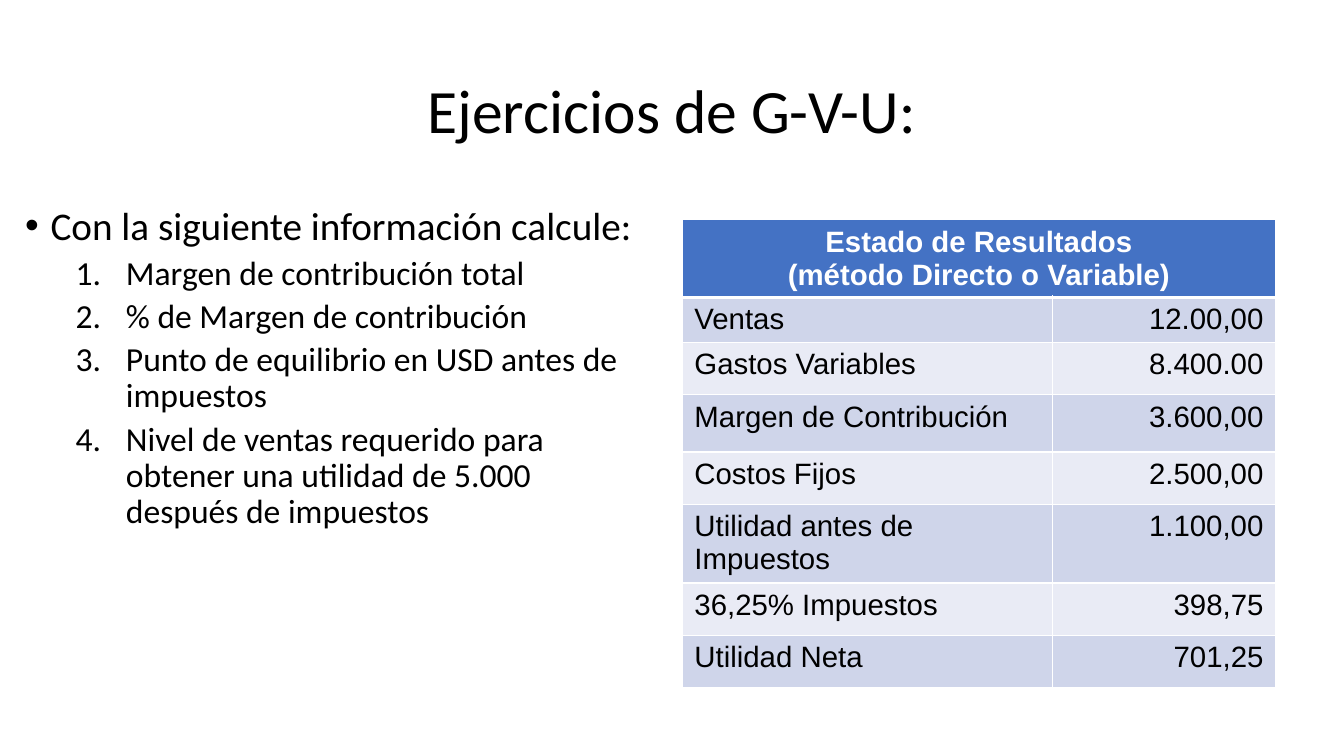
from lxml import etree
from pptx import Presentation
from pptx.dml.color import RGBColor
from pptx.enum.text import MSO_ANCHOR, MSO_AUTO_SIZE, PP_ALIGN
from pptx.oxml.ns import qn
from pptx.util import Cm, Pt

LEFT, MID, RIGHT = PP_ALIGN.LEFT, PP_ALIGN.CENTER, PP_ALIGN.RIGHT
MIDDLE, TOP = MSO_ANCHOR.MIDDLE, MSO_ANCHOR.TOP
FIXED = MSO_AUTO_SIZE.NONE

HUES = {"ink": "000000", "white": "FFFFFF", "head": "4472C4",
        "dark": "CFD5EA", "light": "E9EBF5"}
FONTS = {
    "title": {"name": "Calibri", "size": Pt(44), "bold": False},
    "lead": {"name": "Calibri", "size": Pt(28), "bold": False},
    "item": {"name": "Calibri", "size": Pt(24), "bold": False},
    "head": {"name": "Arial", "size": Pt(21), "bold": True},
    "cell": {"name": "Arial", "size": Pt(21), "bold": False},
}
INSETS = {"margin_left": Cm(0.3), "margin_right": Cm(0.3),
          "margin_top": Cm(0.15), "margin_bottom": Cm(0.15)}

TITLE = "Ejercicios de G-V-U:"
LEAD = "Con la siguiente información calcule:"
TASKS = [
    "Margen de contribución total",
    "% de Margen de contribución",
    "Punto de equilibrio en USD antes de impuestos",
    "Nivel de ventas requerido para obtener una utilidad de 5.000 después de impuestos",
]
HEAD = ["Estado de Resultados", "(método Directo o Variable)"]
ROWS = [
    ("Ventas", "12.00,00", 1.13),
    ("Gastos Variables", "8.400.00", 1.32),
    ("Margen de Contribución", "3.600,00", 1.45),
    ("Costos Fijos", "2.500,00", 1.32),
    ("Utilidad antes de Impuestos", "1.100,00", 1.98),
    ("36,25% Impuestos", "398,75", 1.32),
    ("Utilidad Neta", "701,25", 1.32),
]


def put(obj, vals):
    """Set each named value on an object."""
    for key, val in vals.items():
        setattr(obj, key, val)


def place(shape, box):
    """Move a shape to a box given in centimetres."""
    put(shape, dict(zip(("left", "top", "width", "height"), map(Cm, box))))


def style(para, kind, hue="ink", **form):
    """Format a paragraph and its font."""
    put(para, form)
    put(para.font, FONTS[kind])
    para.font.color.rgb = RGBColor.from_string(HUES[hue])


def mark(para, left, hang, tag, **attrs):
    """Give a paragraph a hanging bullet or number."""
    props = para._p.get_or_add_pPr()
    props.set("marL", str(Cm(left)))
    props.set("indent", str(-Cm(hang)))
    etree.SubElement(props, qn("a:buFont"), typeface="Arial" if tag == "a:buChar" else "+mj-lt")
    etree.SubElement(props, qn(tag), **attrs)


def add_title(slide, box):
    """Fill the title placeholder."""
    shape = slide.shapes.title
    place(shape, box)
    frame = shape.text_frame
    frame.text = TITLE
    put(frame, {"vertical_anchor": MIDDLE, "auto_size": FIXED, "word_wrap": True})
    style(frame.paragraphs[0], "title", alignment=MID, line_spacing=0.9)


def add_list(slide, box):
    """Fill the body placeholder with the lead and numbered tasks."""
    shape = slide.placeholders[1]
    place(shape, box)
    frame = shape.text_frame
    frame.text = "\n".join([LEAD, *TASKS])
    put(frame, {"vertical_anchor": TOP, "auto_size": FIXED, "word_wrap": True})
    lead, *tasks = frame.paragraphs
    mark(lead, 0.64, 0.64, "a:buChar", char="•")
    style(lead, "lead", alignment=LEFT, line_spacing=0.9, space_before=Pt(0))
    for para in tasks:
        mark(para, 2.54, 1.27, "a:buAutoNum", type="arabicPeriod")
        style(para, "item", level=1, alignment=LEFT, line_spacing=0.9, space_before=Pt(5))


def fill_cell(cell, text, hue, kind, ink, align, base=1):
    """Write, border and fill one table cell."""
    cell.text = text
    put(cell, INSETS)
    props = cell._tc.get_or_add_tcPr()
    for side, width in zip("LRTB", (1, 1, 1, base)):
        line = etree.SubElement(props, qn("a:ln" + side), w=str(Pt(width)))
        solid = etree.SubElement(line, qn("a:solidFill"))
        etree.SubElement(solid, qn("a:srgbClr"), val=HUES["white"])
    cell.fill.solid()
    cell.fill.fore_color.rgb = RGBColor.from_string(HUES[hue])
    for para in cell.text_frame.paragraphs:
        style(para, kind, ink, alignment=align)


def add_grid(slide, box):
    """Build the income statement table."""
    grid = slide.shapes.add_table(len(ROWS) + 1, 2, *map(Cm, box)).table
    for col, part in zip(grid.columns, (0.624, 0.376)):
        col.width = Cm(round(box[2] * part, 2))
    grid.rows[0].height = Cm(1.94)
    grid.cell(0, 0).merge(grid.cell(0, 1))
    for col in range(2):
        fill_cell(grid.cell(0, col), "" if col else "\n".join(HEAD),
                  "head", "head", "white", MID, 3)
    for num, (name, value, tall) in enumerate(ROWS, 1):
        grid.rows[num].height = Cm(tall)
        hue = "dark" if num % 2 else "light"
        fill_cell(grid.cell(num, 0), name, hue, "cell", "ink", LEFT)
        fill_cell(grid.cell(num, 1), value, hue, "cell", "ink", RIGHT)


def main():
    """Build and save the slide."""
    deck = Presentation()
    put(deck, {"slide_width": Cm(33.87), "slide_height": Cm(19.05)})
    slide = deck.slides.add_slide(deck.slide_layouts[1])
    add_title(slide, (2.33, 1.01, 29.21, 3.68))
    add_list(slide, (0.38, 5.08, 16.28, 12.09))
    add_grid(slide, (17.2, 5.54, 14.94, 11.78))
    deck.save("out.pptx")


if __name__ == "__main__":
    main()
